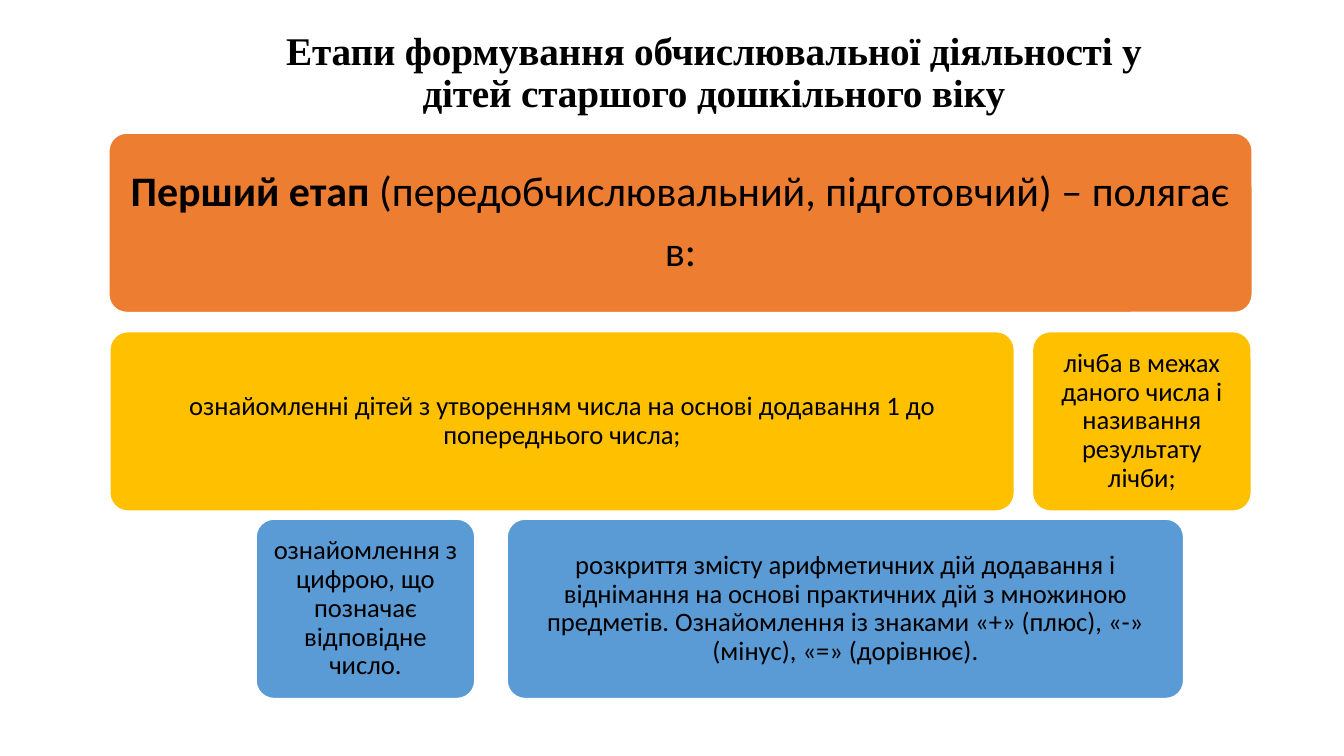
"""Build a slide on the first stage of teaching preschoolers to calculate."""
from dataclasses import dataclass

from pptx import Presentation
from pptx.dml.color import RGBColor
from pptx.enum.shapes import MSO_SHAPE
from pptx.enum.text import MSO_ANCHOR, MSO_AUTO_SIZE, PP_ALIGN
from pptx.util import Inches, Pt


@dataclass(frozen=True)
class Theme:
    """Colours, fonts and type sizes."""
    text: str = "000000"
    outline: str = "FFFFFF"
    stage: str = "ED7D31"
    upper: str = "FFC000"
    lower: str = "5B9BD5"
    title_font: str = "Times New Roman"
    body_font: str = "Calibri"
    title_size: float = 28
    stage_size: float = 30
    body_size: float = 19


def write(tf, paragraphs, *, font, size, color, gap=0, spacing=0):
    """Fill a text frame with centred paragraphs of (text, bold) runs."""
    for i, runs in enumerate(paragraphs):
        p = tf.paragraphs[0] if i == 0 else tf.add_paragraph()
        p.alignment = PP_ALIGN.CENTER
        p.line_spacing = 0.9
        p.space_before = Pt(0)
        p.space_after = Pt(gap)
        for text, bold in runs:
            r = p.add_run()
            r.text = text
            r.font.name = font
            r.font.size = Pt(size)
            r.font.bold = bold
            r.font.color.rgb = RGBColor.from_string(color)
            if spacing:
                r._r.get_or_add_rPr().set("spc", str(spacing))


class StageSlide:
    """Holds the theme and the slide being built."""

    def __init__(self, prs, theme):
        """Add a title-only slide."""
        self.theme = theme
        self.slide = prs.slides.add_slide(prs.slide_layouts[5])

    def title(self, text, left, top, width, height):
        """Place and format the title placeholder."""
        sp = self.slide.shapes.title
        sp.left, sp.top = Inches(left), Inches(top)
        sp.width, sp.height = Inches(width), Inches(height)
        tf = sp.text_frame
        tf.word_wrap = True
        tf.auto_size = MSO_AUTO_SIZE.NONE
        tf.vertical_anchor = MSO_ANCHOR.BOTTOM
        tf.margin_bottom = Inches(0.16)
        write(tf, [[(text, True)]], font=self.theme.title_font,
              size=self.theme.title_size, color=self.theme.text, spacing=-10)

    def card(self, paragraphs, left, top, width, fill, size, inset):
        """Add a rounded card with centred text."""
        sp = self.slide.shapes.add_shape(
            MSO_SHAPE.ROUNDED_RECTANGLE,
            Inches(left), Inches(top), Inches(width), Inches(1.78))
        sp.adjustments[0] = 0.1
        sp.shadow.inherit = False
        sp.fill.solid()
        sp.fill.fore_color.rgb = RGBColor.from_string(fill)
        sp.line.color.rgb = RGBColor.from_string(self.theme.outline)
        sp.line.width = Pt(1)
        tf = sp.text_frame
        tf.word_wrap = True
        tf.vertical_anchor = MSO_ANCHOR.MIDDLE
        tf.margin_left = tf.margin_right = Inches(inset)
        tf.margin_top = tf.margin_bottom = Inches(inset)
        write(tf, paragraphs, font=self.theme.body_font, size=size,
              color=self.theme.text, gap=0.35 * size)


def main():
    """Build and save the slide."""
    prs = Presentation()
    prs.slide_width, prs.slide_height = Inches(13.33), Inches(7.5)
    theme = Theme()
    s = StageSlide(prs, theme)
    s.title("Етапи формування обчислювальної діяльності у дітей старшого "
            "дошкільного віку", 2.42, 0.57, 9.32, 0.74)
    s.card([[("Перший етап ", True),
             ("(передобчислювальний, підготовчий) – полягає", False)],
            [("в:", False)]],
           1.08, 1.32, 11.34, theme.stage, theme.stage_size, 0.12)

    upper_top, lower_top, narrow = 3.29, 5.15, 2.17
    tasks = [
        ("ознайомленні дітей з утворенням числа на основі додавання 1 до "
         "попереднього числа;", 1.09, upper_top, 8.97, theme.upper),
        ("ознайомлення з цифрою, що позначає відповідне число.",
         2.54, lower_top, narrow, theme.lower),
        ("розкриття змісту арифметичних дій додавання і віднімання на основі "
         "практичних дій з множиною предметів. Ознайомлення із знаками «+» "
         "(плюс), «-» (мінус), «=» (дорівнює).",
         5.03, lower_top, 6.71, theme.lower),
        ("лічба в межах даного числа і називання результату лічби;",
         10.24, upper_top, narrow, theme.upper),
    ]
    for text, left, top, width, fill in tasks:
        s.card([[(text, False)]], left, top, width, fill, theme.body_size, 0.08)
    prs.save("out.pptx")


if __name__ == "__main__":
    main()
